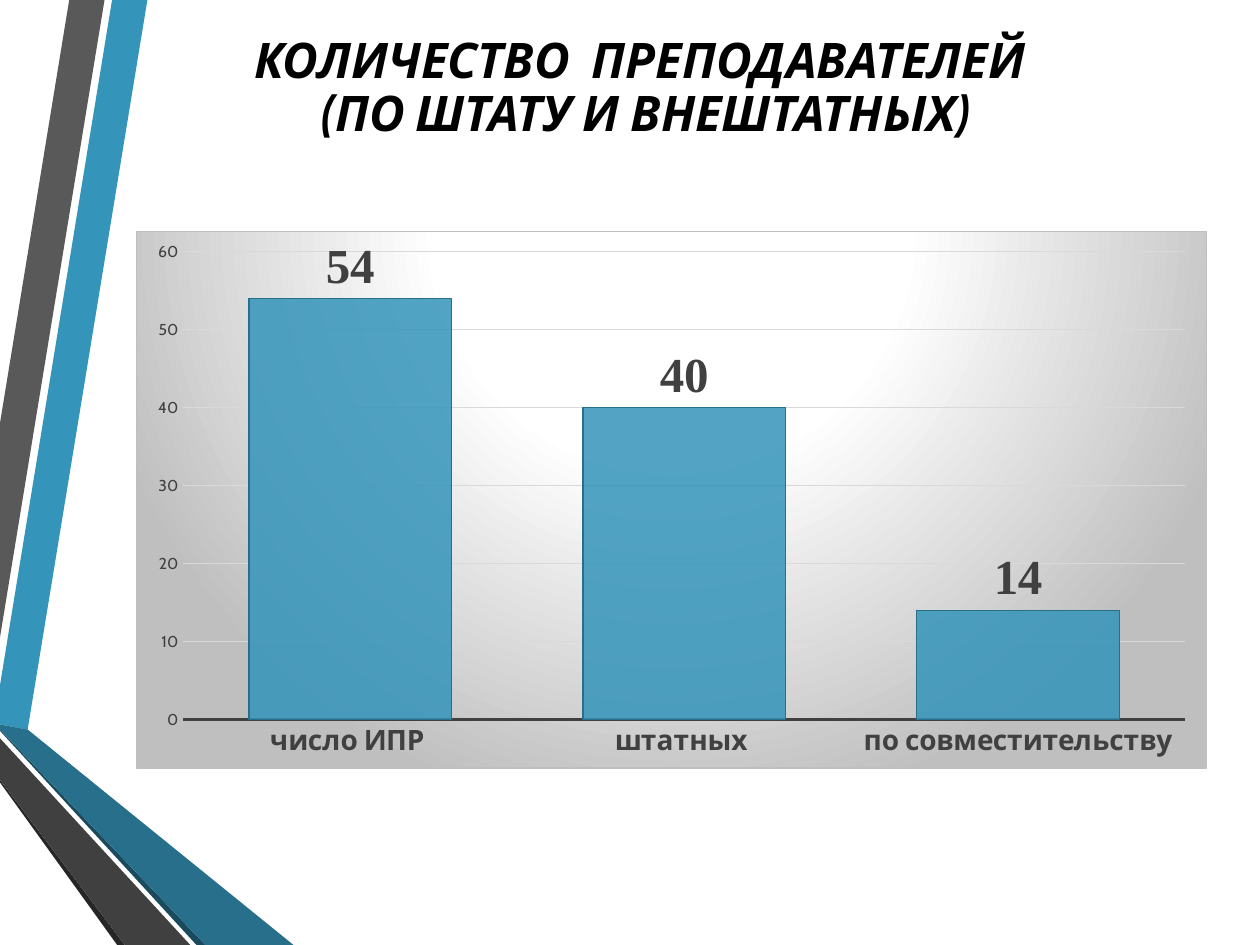
from dataclasses import dataclass

from lxml.etree import SubElement
from pptx import Presentation
from pptx.chart.data import CategoryChartData
from pptx.dml.color import RGBColor
from pptx.enum.chart import XL_CHART_TYPE as ChartType
from pptx.enum.chart import XL_LABEL_POSITION as LabelPosition
from pptx.enum.chart import XL_TICK_MARK as TickMark
from pptx.enum.text import MSO_ANCHOR, PP_ALIGN
from pptx.oxml import parse_xml
from pptx.oxml.ns import nsdecls, qn
from pptx.util import Inches, Pt


@dataclass(frozen=True)
class Theme:
    font: str = "Cabin"
    label_font: str = "Times New Roman"
    black: str = "000000"
    blue: str = "3494BA"
    blue_dark: str = "276F8B"
    blue_deep: str = "1A4A5D"
    gray: str = "595959"
    gray_dark: str = "404040"
    gray_deep: str = "262626"
    grid: str = "D9D9D9"
    edge: str = "BFBFBF"
    white: str = "FFFFFF"
    title_size: int = 28
    category_size: int = 16
    base_size: int = 10
    value_size: int = 9


theme = Theme()


def style_font(font, color, **values):
    for name, value in values.items():
        setattr(font, name, value)
    font.color.rgb = RGBColor.from_string(color)


def style_line(line, color, width):
    line.color.rgb = RGBColor.from_string(color)
    line.width = Pt(width)


deck = Presentation()
deck.slide_width, deck.slide_height = Inches(10), Inches(7.5)
page = deck.slides.add_slide(deck.slide_layouts[5])

# Folded ribbons on the left edge
ribbons = [
    (theme.blue, [(0, 5.44), (0, 5.75), (0.22, 5.79), (1.17, 0), (0.89, 0)]),
    (theme.gray, [(0.83, 0), (0.55, 0), (0, 3.36), (0, 5.06)]),
    (theme.gray_deep, [(0, 6.19), (0, 6.21), (0.93, 7.5), (0.99, 7.5)]),
    (theme.blue_deep, [(0, 5.79), (0, 5.8), (1.56, 7.5), (1.63, 7.5)]),
    (theme.blue_dark, [(0, 5.79), (1.63, 7.5), (2.33, 7.5), (0.22, 5.79), (0, 5.75)]),
    (theme.gray_dark, [(0, 6.19), (0.99, 7.5), (1.51, 7.5), (0, 5.86)]),
]
for color, corners in ribbons:
    points = [(Inches(x), Inches(y)) for x, y in corners]
    builder = page.shapes.build_freeform(*points[0])
    builder.add_line_segments(points[1:], close=True)
    ribbon = builder.convert_to_shape()
    ribbon.shadow.inherit = False
    ribbon.fill.solid()
    ribbon.fill.fore_color.rgb = RGBColor.from_string(color)
    ribbon.line.fill.background()

# Title
title = page.shapes.title
title.left, title.top = Inches(0.33), Inches(0.25)
title.width, title.height = Inches(9.5), Inches(0.92)
title.text_frame.vertical_anchor = MSO_ANCHOR.MIDDLE
para = title.text_frame.paragraphs[0]
para.alignment = PP_ALIGN.CENTER
para.line_spacing = 0.9
for index, line in enumerate(["КОЛИЧЕСТВО  ПРЕПОДАВАТЕЛЕЙ", " (ПО ШТАТУ И ВНЕШТАТНЫХ)"]):
    if index:
        para.add_line_break()
    span = para.add_run()
    span.text = line
    style_font(span.font, theme.black, name=theme.font, size=Pt(theme.title_size),
               bold=True, italic=True)

# Column chart
data = CategoryChartData()
data.categories = ["число ИПР ", "штатных ", "по совместительству"]
data.add_series("Series 1", [54, 40, 14])
chart = page.shapes.add_chart(ChartType.COLUMN_CLUSTERED, Inches(1.08), Inches(1.83),
                              Inches(8.5), Inches(4.27), data).chart
chart.has_legend = False
chart.has_title = False
style_font(chart.font, theme.black, name=theme.font, size=Pt(theme.base_size))

# Axes
categories, values = chart.category_axis, chart.value_axis
for axis in (categories, values):
    axis.major_tick_mark = axis.minor_tick_mark = TickMark.NONE
style_font(categories.tick_labels.font, theme.gray_dark, name=theme.font,
           size=Pt(theme.category_size), bold=True)
style_line(categories.format.line, theme.gray_dark, 1.5)
style_font(values.tick_labels.font, theme.gray_dark, name=theme.font,
           size=Pt(theme.value_size), bold=False)
values.minimum_scale, values.maximum_scale, values.major_unit = 0, 60, 10
values.format.line.fill.background()
style_line(values.major_gridlines.format.line, theme.grid, 0.75)

# Columns and their labels
plot = chart.plots[0]
plot.gap_width = 65
plot.vary_by_categories = False
series = plot.series[0]
series.format.fill.solid()
series.format.fill.fore_color.rgb = RGBColor.from_string(theme.blue)
series_color = next(chart.element.iter(qn("c:ser"))).find(
    f"{qn('c:spPr')}/{qn('a:solidFill')}/{qn('a:srgbClr')}")
SubElement(series_color, qn("a:alpha")).set("val", "85000")
style_line(series.format.line, theme.blue_dark, 0.75)
labels = series.data_labels
labels.show_value = True
labels.position = LabelPosition.OUTSIDE_END
style_font(labels.font, theme.gray_dark, name=theme.label_font,
           size=Pt(theme.title_size), bold=True)

# Chart background: radial gradient with a thin border
stops = "".join(
    f'<a:gs pos="{percent * 1000}"><a:srgbClr val="{color}"/></a:gs>'
    for percent, color in [(0, theme.white), (39, theme.white), (100, theme.edge)])
background = parse_xml(
    f'<c:spPr {nsdecls("c", "a")}><a:gradFill><a:gsLst>{stops}</a:gsLst>'
    '<a:path path="circle"><a:fillToRect l="50000" t="-80000" r="50000" b="180000"/></a:path>'
    f'</a:gradFill><a:ln w="{Pt(0.75)}"><a:solidFill><a:srgbClr val="{theme.edge}"/>'
    '</a:solidFill></a:ln></c:spPr>')
chart.element.find(qn("c:chart")).addnext(background)

deck.save("out.pptx")
